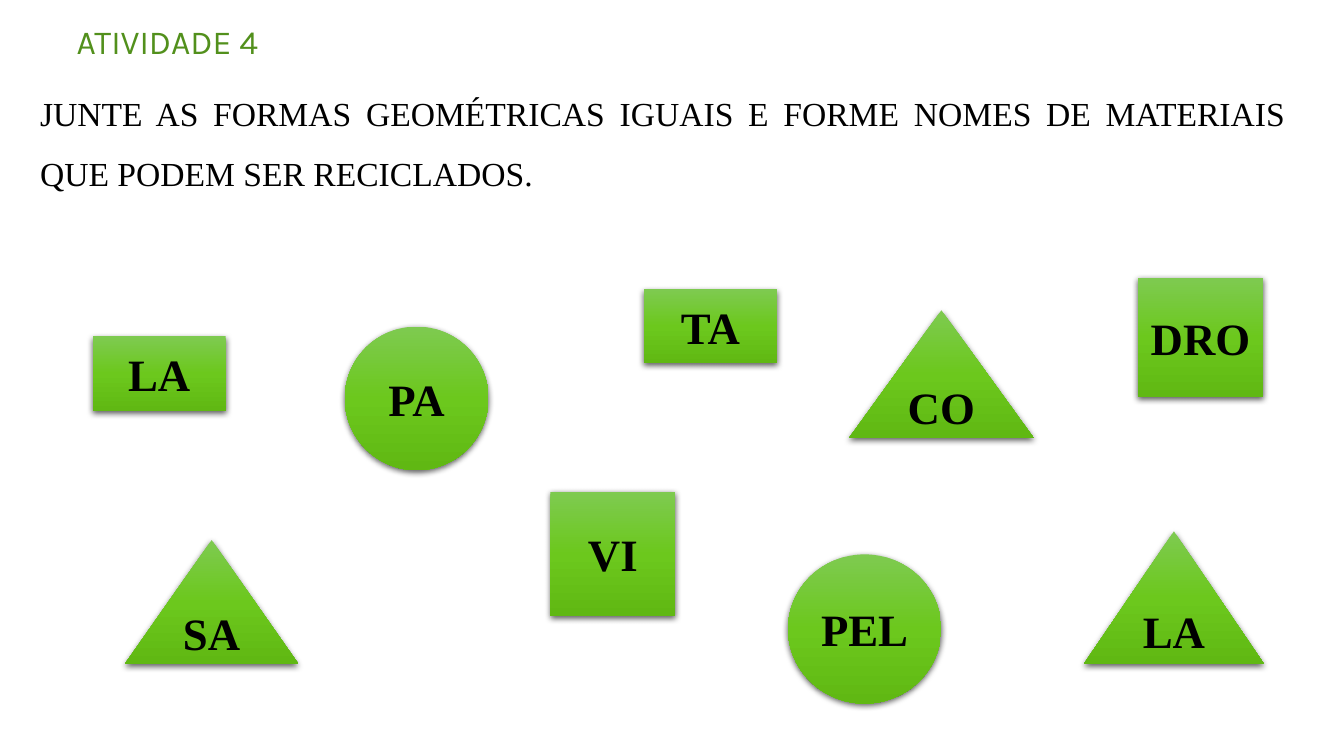
from dataclasses import dataclass

from pptx import Presentation
from pptx.dml.color import RGBColor
from pptx.enum.shapes import MSO_SHAPE as Kind
from pptx.enum.text import MSO_ANCHOR as Anchor, PP_ALIGN as Align
from pptx.oxml import parse_xml
from pptx.oxml.ns import nsdecls
from pptx.util import Cm, Pt

COLOURS = {
    "black": "000000",
    "heading": "52901C",
    "light": "7ECA50",
    "middle": "6CC81D",
    "dark": "60B813",
}
GRADIENT = {0: "light", 50: "middle", 100: "dark"}
SERIF = "Times New Roman"


@dataclass
class Syllable:
    """A geometric shape holding one syllable; lengths in centimetres."""
    text: str
    kind: Kind
    left: float
    top: float
    width: float
    height: float


@dataclass
class Caption:
    """A text box; lengths in centimetres."""
    text: str
    left: float
    top: float
    width: float
    height: float
    font: str
    colour: str
    para_format: dict


CAPTIONS = [
    Caption("JUNTE AS FORMAS GEOMÉTRICAS IGUAIS E FORME NOMES DE MATERIAIS "
            "QUE PODEM SER RECICLADOS.", 0.76, 1.7, 31.88, 9.65, SERIF, "black",
            {"alignment": Align.JUSTIFY, "line_spacing": 1.5}),
    Caption("ATIVIDADE 4", 1.68, 0.41, 7.29, 1.27, "Karla", "heading",
            {"alignment": Align.LEFT}),
]

SYLLABLES = [
    Syllable("LA", Kind.RECTANGLE, 2.34, 8.48, 3.35, 1.87),
    Syllable("TA", Kind.RECTANGLE, 16.23, 7.29, 3.35, 1.87),
    Syllable("PA", Kind.OVAL, 8.69, 8.23, 3.62, 3.62),
    Syllable("PEL", Kind.OVAL, 19.86, 13.97, 3.86, 3.76),
    Syllable("SA", Kind.ISOSCELES_TRIANGLE, 3.15, 13.61, 4.37, 3.12),
    Syllable("LA", Kind.ISOSCELES_TRIANGLE, 27.31, 13.39, 4.55, 3.35),
    Syllable("CO", Kind.ISOSCELES_TRIANGLE, 21.39, 7.82, 4.67, 3.23),
    Syllable("VI", Kind.RECTANGLE, 13.87, 12.4, 3.15, 3.12),
    Syllable("DRO", Kind.RECTANGLE, 28.68, 7.01, 3.15, 3),
]


def write(box, text: str, para_format: dict, font_format: dict, colour: str) -> None:
    para = box.text_frame.paragraphs[0]
    span = para.add_run()
    span.text = text
    for target, values in ((para, para_format), (span.font, font_format)):
        for name, value in values.items():
            setattr(target, name, value)
    span.font.color.rgb = RGBColor.from_string(COLOURS[colour])


def add_caption(page, caption: Caption) -> None:
    box = page.shapes.add_textbox(Cm(caption.left), Cm(caption.top),
                                  Cm(caption.width), Cm(caption.height))
    box.text_frame.word_wrap = True
    write(box, caption.text, caption.para_format,
          {"name": caption.font, "size": Pt(24)}, caption.colour)


def add_gradient_and_shadow(shape) -> None:
    stops = "".join(
        f'<a:gs pos="{percent * 1000}"><a:srgbClr val="{COLOURS[name]}"/></a:gs>'
        for percent, name in GRADIENT.items())
    properties = shape.element.spPr
    # The fill follows the transform and the geometry
    properties.insert(2, parse_xml(
        f'<a:gradFill {nsdecls("a")} rotWithShape="1"><a:gsLst>{stops}</a:gsLst>'
        '<a:lin ang="5400000" scaled="0"/></a:gradFill>'))
    # The effect list closes the shape properties
    properties[-1].append(parse_xml(
        f'<a:outerShdw {nsdecls("a")} blurRad="{Pt(4.5)}" dist="{Pt(1.5)}" '
        'dir="5400000" algn="ctr" rotWithShape="0">'
        f'<a:srgbClr val="{COLOURS["black"]}"><a:alpha val="63000"/></a:srgbClr>'
        '</a:outerShdw>'))


def add_syllable(page, syllable: Syllable) -> None:
    shape = page.shapes.add_shape(syllable.kind, Cm(syllable.left), Cm(syllable.top),
                                  Cm(syllable.width), Cm(syllable.height))
    shape.line.fill.background()
    shape.shadow.inherit = False
    add_gradient_and_shadow(shape)
    shape.text_frame.word_wrap = True
    shape.text_frame.vertical_anchor = Anchor.MIDDLE
    write(shape, syllable.text, {"alignment": Align.CENTER},
          {"name": SERIF, "size": Pt(32), "bold": True}, "black")


def main() -> None:
    deck = Presentation()
    deck.slide_width, deck.slide_height = Cm(33.87), Cm(19.05)
    page = deck.slides.add_slide(deck.slide_layouts[6])

    # Heading and instruction
    for caption in CAPTIONS:
        add_caption(page, caption)

    # Syllables to be paired by shape
    for syllable in SYLLABLES:
        add_syllable(page, syllable)

    deck.save("out.pptx")


if __name__ == "__main__":
    main()
